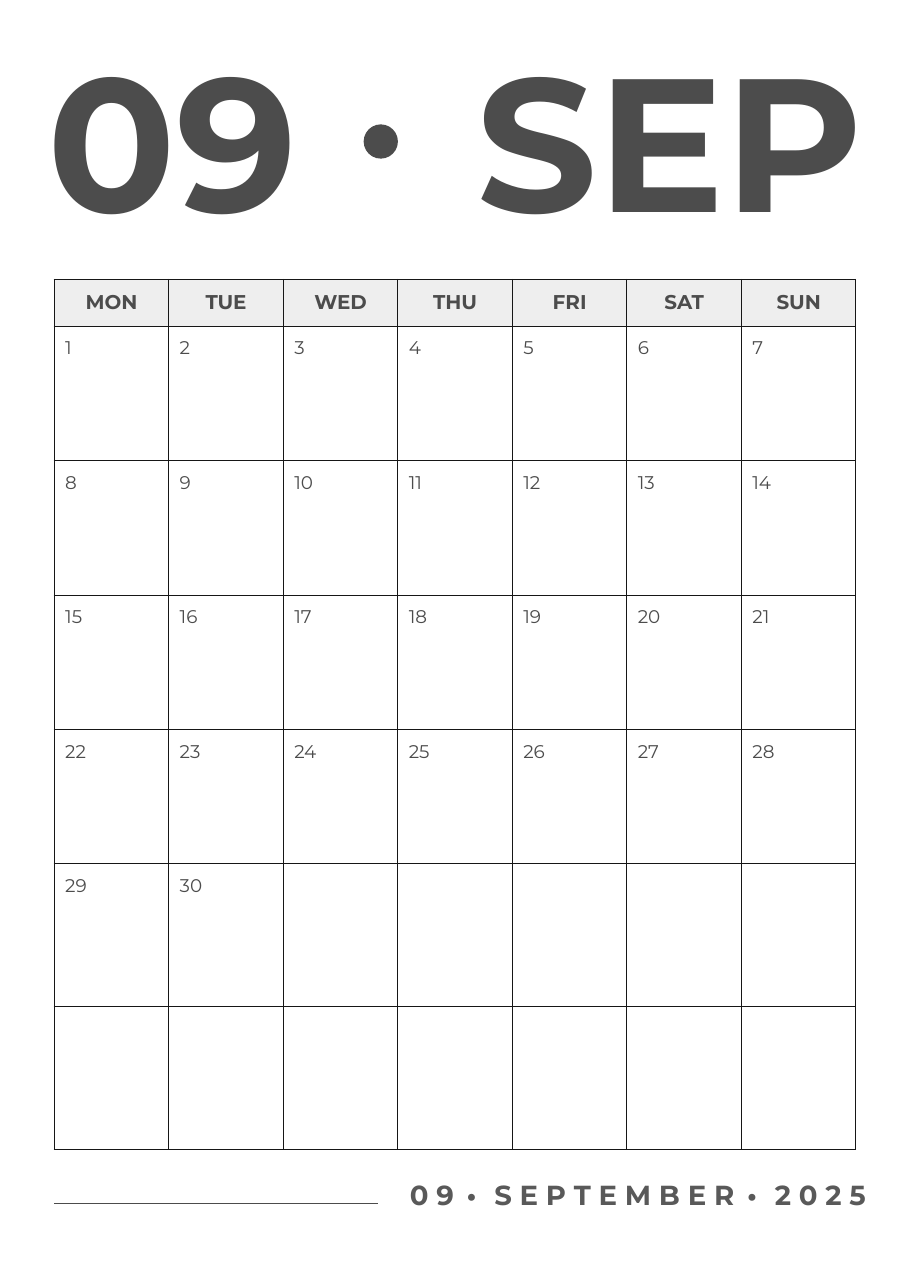
from pptx import Presentation
from pptx.util import Pt
from pptx.dml.color import RGBColor
from pptx.enum.shapes import MSO_CONNECTOR, MSO_SHAPE
from pptx.enum.text import MSO_ANCHOR, PP_ALIGN
from lxml.etree import SubElement
from pptx.oxml.ns import qn

COLORS = {"ink": "4C4C4C", "footer": "595959", "grid": "161616", "header": "EEEEEE"}
FONT = "Montserrat"
TITLE = {"size": Pt(124), "bold": True}
FOOTER = {"size": Pt(18), "bold": True}
WEEKDAY = {"size": Pt(13), "bold": True}
DATE = {"size": Pt(12), "bold": False}
DAYS = ["MON", "TUE", "WED", "THU", "FRI", "SAT", "SUN"]
MARGINS = ("margin_left", "margin_top", "margin_right", "margin_bottom")
LAST_DATE = 30
WEEKS = 6
HEADER_H, DATE_H, TALL_DATE_H, NOTE_H = 30.6, 29.3, 34.8, 58.6


def rgb(name):
    return RGBColor.from_string(COLORS[name])


def add_run(p, text, style, color):
    r = p.add_run()
    r.text = text
    r.font.name = FONT
    r.font.color.rgb = rgb(color)
    for key, value in style.items():
        setattr(r.font, key, value)
    return r


def add_text(s, x, y, w, h, align):
    tf = s.shapes.add_textbox(Pt(x), Pt(y), Pt(w), Pt(h)).text_frame
    tf.word_wrap = True
    for margin in MARGINS:
        setattr(tf, margin, 0)
    p = tf.paragraphs[0]
    p.alignment = align
    return p


def add_title(s, x, y, w, h):
    dot = 22.4
    p = add_text(s, x, y, 194, h, PP_ALIGN.LEFT)
    add_run(p, "09", TITLE, "ink")
    p = add_text(s, x + w - 312.4, y, 312.4, h, PP_ALIGN.RIGHT)
    add_run(p, "SEP", TITLE, "ink")
    sp = s.shapes.add_shape(MSO_SHAPE.OVAL, Pt(x + 206.7), Pt(y + 66.2), Pt(dot), Pt(dot))
    sp.shadow.inherit = False
    sp.fill.solid()
    sp.fill.fore_color.rgb = rgb("ink")
    sp.line.fill.background()


def set_borders(cell, sides):
    tcPr = cell._tc.get_or_add_tcPr()
    for side in "LRTB":
        ln = SubElement(tcPr, qn(f"a:ln{side}"), w=str(Pt(0.75)))
        if side in sides:
            fill = SubElement(ln, qn("a:solidFill"))
            SubElement(fill, qn("a:srgbClr"), val=COLORS["grid"])
        else:
            SubElement(ln, qn("a:noFill"))


def fill_cell(cell, text, style, align, anchor):
    for margin in MARGINS:
        setattr(cell, margin, Pt(7.2))
    cell.vertical_anchor = anchor
    p = cell.text_frame.paragraphs[0]
    p.alignment = align
    add_run(p, text, style, "ink")


def add_calendar(s, x, y, w):
    heights = [HEADER_H]
    for week in range(WEEKS):
        full = (week + 1) * len(DAYS) <= LAST_DATE
        heights += [DATE_H if full else TALL_DATE_H, NOTE_H]
    table = s.shapes.add_table(len(heights), len(DAYS), Pt(x), Pt(y), Pt(w), Pt(sum(heights))).table
    table.first_row = table.horz_banding = False
    for row, height in zip(table.rows, heights):
        row.height = Pt(height)
    for c, day in enumerate(DAYS):
        table.columns[c].width = Pt(w / len(DAYS))
        cell = table.cell(0, c)
        set_borders(cell, "LRTB")
        cell.fill.solid()
        cell.fill.fore_color.rgb = rgb("header")
        fill_cell(cell, day, WEEKDAY, PP_ALIGN.CENTER, MSO_ANCHOR.MIDDLE)
        for week in range(WEEKS):
            date = week * len(DAYS) + c + 1
            date_cell, note_cell = (table.cell(2 * week + i, c) for i in (1, 2))
            for cell, sides in ((date_cell, "LRT"), (note_cell, "LRB")):
                set_borders(cell, sides)
                cell.fill.background()
            if date <= LAST_DATE:
                fill_cell(date_cell, str(date), DATE, PP_ALIGN.LEFT, MSO_ANCHOR.TOP)


def add_footer(s, x, y, w, h):
    rule_y = Pt(y + 16.5)
    rule = s.shapes.add_connector(MSO_CONNECTOR.STRAIGHT, Pt(x), rule_y, Pt(x + 211.7), rule_y)
    rule.line.color.rgb = rgb("ink")
    rule.line.width = Pt(0.75)
    SubElement(rule._element.spPr, qn("a:effectLst"))
    p = add_text(s, x + w - 312.5, y, 312.5, h, PP_ALIGN.RIGHT)
    for i, word in enumerate(["09", "SEPTEMBER", "2025"]):
        if i:
            r = add_run(p, " • ", FOOTER, "footer")
            r.font._element.set("spc", "325")
        add_run(p, " ".join(word), FOOTER, "footer")


def main():
    prs = Presentation()
    prs.slide_width, prs.slide_height = Pt(595.44), Pt(841.68)
    s = prs.slides.add_slide(prs.slide_layouts[6])
    add_calendar(s, 35.4, 182.5, 524.1)
    add_footer(s, 35.4, 769.7, 530.5, 21.6)
    add_title(s, 31, 15.1, 533.5, 150.5)
    prs.save("out.pptx")


if __name__ == "__main__":
    main()
